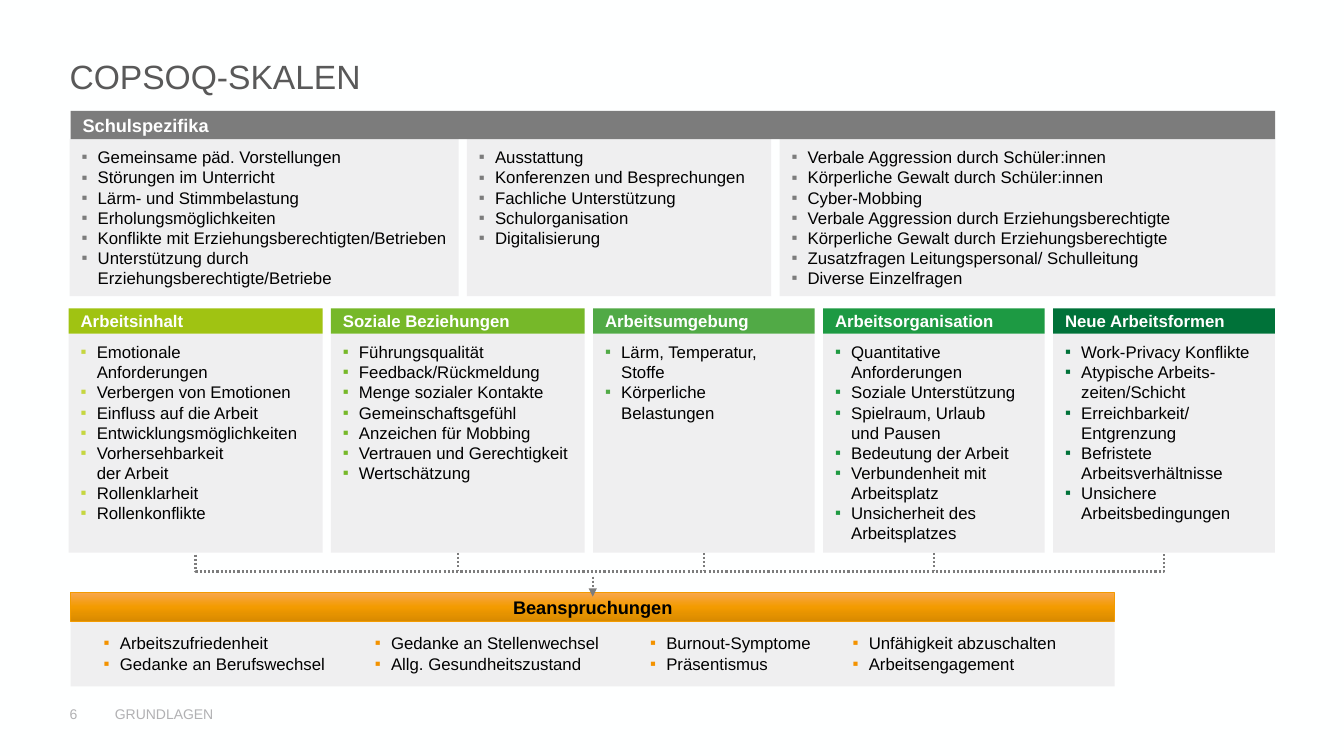
from copy import deepcopy

from lxml import etree
from pptx import Presentation
from pptx.dml.color import RGBColor
from pptx.enum.dml import MSO_LINE
from pptx.enum.shapes import MSO_CONNECTOR, MSO_SHAPE
from pptx.enum.text import MSO_ANCHOR, PP_ALIGN
from pptx.oxml.ns import qn
from pptx.util import Pt

RECTANGLE = MSO_SHAPE.RECTANGLE
STRAIGHT = MSO_CONNECTOR.STRAIGHT
DOTTED = MSO_LINE.ROUND_DOT
TOP, MIDDLE = MSO_ANCHOR.TOP, MSO_ANCHOR.MIDDLE
LEFT, CENTER = PP_ALIGN.LEFT, PP_ALIGN.CENTER

COLORS = {
    "background": "FEFFFF", "panel": "EFEFF0", "gray": "7C7C7C",
    "title": "595959", "footer": "B1B1B3", "black": "000000",
    "white": "FFFFFF", "lime_bullet": "C6D640", "lime": "A0C312",
    "leaf": "76B829", "green": "51AA46", "forest": "1D9A43",
    "forest_bullet": "1F9A42", "pine": "007239", "orange_bullet": "F39200",
    "orange_light": "F8A64B", "orange": "F39B00", "orange_dark": "D88A00",
}

FONT = "Arial"
GAP = 5.9
INSET = 8.6
SCHOOL_LEFT = 49.7
SCALES_LEFT = 49
BRACKET_BOTTOM = 408.2

SCHOOL_PANELS = [
    (277.9, ["Gemeinsame päd. Vorstellungen", "Störungen im Unterricht",
             "Lärm- und Stimmbelastung", "Erholungsmöglichkeiten",
             "Konflikte mit Erziehungsberechtigten/Betrieben",
             "Unterstützung durch Erziehungsberechtigte/Betriebe"]),
    (217.4, ["Ausstattung", "Konferenzen und Besprechungen",
             "Fachliche Unterstützung", "Schulorganisation",
             "Digitalisierung"]),
    (354.2, ["Verbale Aggression durch Schüler:innen",
             "Körperliche Gewalt durch Schüler:innen", "Cyber-Mobbing",
             "Verbale Aggression durch Erziehungsberechtigte",
             "Körperliche Gewalt durch Erziehungsberechtigte",
             "Zusatzfragen Leitungspersonal/ Schulleitung",
             "Diverse Einzelfragen"]),
]

SCALES = [
    ("Arbeitsinhalt", 181.4, 2.9, "lime", "lime_bullet",
     ["Emotionale\nAnforderungen", "Verbergen von Emotionen",
      "Einfluss auf die Arbeit", "Entwicklungsmöglichkeiten",
      "Vorhersehbarkeit\nder Arbeit", "Rollenklarheit", "Rollenkonflikte"]),
    ("Soziale Beziehungen", 181.4, 2.9, "leaf", "leaf",
     ["Führungsqualität", "Feedback/Rückmeldung", "Menge sozialer Kontakte",
      "Gemeinschaftsgefühl", "Anzeichen für Mobbing",
      "Vertrauen und Gerechtigkeit", "Wertschätzung"]),
    ("Arbeitsumgebung", 158.4, INSET, "green", "green",
     ["Lärm, Temperatur,\nStoffe", "Körperliche Belastungen"]),
    ("Arbeitsorganisation", 158.4, 2.9, "forest", "forest_bullet",
     ["Quantitative Anforderungen", "Soziale Unterstützung",
      "Spielraum, Urlaub\nund Pausen", "Bedeutung der Arbeit",
      "Verbundenheit mit Arbeitsplatz", "Unsicherheit des Arbeitsplatzes"]),
    ("Neue Arbeitsformen", 158.4, 2.9, "pine", "pine",
     ["Work-Privacy Konflikte", "Atypische Arbeits-zeiten/Schicht",
      "Erreichbarkeit/ Entgrenzung", "Befristete Arbeitsverhältnisse",
      "Unsichere Arbeitsbedingungen"]),
]

STRAINS = [
    (65.5, ["Arbeitszufriedenheit", "Gedanke an Berufswechsel"]),
    (259.2, ["Gedanke an Stellenwechsel", "Allg. Gesundheitszustand"]),
    (455.8, ["Burnout-Symptome", "Präsentismus"]),
    (600.5, ["Unfähigkeit abzuschalten", "Arbeitsengagement"]),
]


def rgb(name):
    return RGBColor.from_string(COLORS[name])


def add_rectangle(page, left, top, width, height, color):
    box = page.shapes.add_shape(RECTANGLE, Pt(left), Pt(top), Pt(width), Pt(height))
    box.shadow.inherit = False
    box.fill.solid()
    box.fill.fore_color.rgb = rgb(color)
    box.line.fill.background()
    return box


def set_frame(box, insets, anchor=TOP, wrap=True):
    frame = box.text_frame
    frame.word_wrap = wrap
    frame.vertical_anchor = anchor
    (frame.margin_left, frame.margin_top,
     frame.margin_right, frame.margin_bottom) = map(Pt, insets)
    return frame


def write(para, text, size, color, bold=False, align=LEFT):
    para.alignment = align
    for index, part in enumerate(text.split("\n")):
        if index:
            para.add_line_break()
        span = para.add_run()
        span.text = part
        span.font.name = FONT
        span.font.size = Pt(size)
        span.font.bold = bold
        span.font.color.rgb = rgb(color)


def add_bullet(para, color):
    props = para._p.get_or_add_pPr()
    props.set("marL", str(Pt(11.5)))
    props.set("indent", str(-Pt(11.5)))
    bullet_color = etree.SubElement(props, qn("a:buClr"))
    etree.SubElement(bullet_color, qn("a:srgbClr"), val=COLORS[color])
    etree.SubElement(props, qn("a:buFont"), typeface=FONT)
    etree.SubElement(props, qn("a:buChar"), char="▪")


def write_list(frame, items, bullet):
    for index, item in enumerate(items):
        para = frame.add_paragraph() if index else frame.paragraphs[0]
        add_bullet(para, bullet)
        write(para, item, 12, "black")


def add_panel(page, left, top, width, height, items, bullet, right=2.9):
    box = add_rectangle(page, left, top, width, height, "panel")
    write_list(set_frame(box, (INSET, 5.8, right, 0)), items, bullet)


def add_header(page, left, top, width, height, text, color, size):
    box = add_rectangle(page, left, top, width, height, color)
    frame = set_frame(box, (INSET, 0, 0, 0), MIDDLE)
    write(frame.paragraphs[0], text, size, "white", True)


def add_label(page, left, top, width, height, text, size, color, wrap=False):
    box = page.shapes.add_textbox(Pt(left), Pt(top), Pt(width), Pt(height))
    para = set_frame(box, (0, 0, 0, 0), wrap=wrap).paragraphs[0]
    write(para, text, size, color)
    return para


def style_dotted(line):
    line.color.rgb = rgb("gray")
    line.width = Pt(1.5)
    line.dash_style = DOTTED


def add_stem(page, x, top, bottom, arrow=False):
    stem = page.shapes.add_connector(STRAIGHT, Pt(x), Pt(top), Pt(x), Pt(bottom))
    style_dotted(stem.line)
    if arrow:
        etree.SubElement(stem.line._get_or_add_ln(), qn("a:tailEnd"), type="triangle")
    etree.SubElement(stem._element.spPr, qn("a:effectLst"))


def add_bracket(page, left, right):
    top, bottom = Pt(393.1), Pt(BRACKET_BOTTOM)
    builder = page.shapes.build_freeform(Pt(left), top)
    builder.add_line_segments(
        [(Pt(left), bottom), (Pt(right), bottom), (Pt(right), top)], close=False)
    bracket = builder.convert_to_shape()
    bracket.shadow.inherit = False
    bracket.fill.background()
    style_dotted(bracket.line)


def add_strain_bar(page):
    bar = add_rectangle(page, 50.4, 423.4, 745.9, 20.2, "orange")
    bar.fill.gradient()
    bar.fill.gradient_angle = 270
    stop_list = bar._element.spPr.find(".//" + qn("a:gsLst"))
    stop_list.insert(1, deepcopy(stop_list[0]))
    shades = ("orange_light", "orange", "orange_dark")
    for index, (stop, shade) in enumerate(zip(bar.fill.gradient_stops, shades)):
        stop.position = index / 2
        stop.color.rgb = rgb(shade)
    bar.line.color.rgb = rgb("orange")
    bar.line.width = Pt(0.5)
    frame = set_frame(bar, (0, 0, 0, 0), MIDDLE)
    write(frame.paragraphs[0], "Beanspruchungen", 13, "black", True, CENTER)


def add_strains(page):
    add_rectangle(page, 50.4, 442.1, 745.9, 48.2, "panel")
    add_strain_bar(page)
    for left, items in STRAINS:
        box = page.shapes.add_textbox(Pt(left), Pt(449.3), Pt(195.8), Pt(35.3))
        write_list(set_frame(box, (INSET, 2.9, 0, 0)), items, "orange_bullet")
    add_stem(page, 423.4, 411.8, 426.2, arrow=True)


def column_lefts(start, widths):
    return [start + sum(widths[:i]) + i * GAP for i in range(len(widths))]


def add_scales(page):
    widths = [scale[1] for scale in SCALES]
    lefts = column_lefts(SCALES_LEFT, widths)
    centers = [left + width / 2 for left, width in zip(lefts, widths)]
    add_bracket(page, centers[0], centers[-1])
    for center in centers[1:-1]:
        add_stem(page, center, 388.8, BRACKET_BOTTOM)
    for left, (name, width, right, color, bullet, items) in zip(lefts, SCALES):
        add_panel(page, left, 238.3, width, 156.4, items, bullet, right)
        add_header(page, left, 220.3, width, 18, name, color, 12)


def add_school(page):
    lefts = column_lefts(SCHOOL_LEFT, [width for width, _ in SCHOOL_PANELS])
    for left, (width, items) in zip(lefts, SCHOOL_PANELS):
        add_panel(page, left, 99.2, width, 112.3, items, "gray")
    add_header(page, 50.4, 79.2, 860.4, 20.2, "Schulspezifika", "gray", 13)


def main():
    deck = Presentation()
    deck.slide_width, deck.slide_height = Pt(960), Pt(540)
    page = deck.slides.add_slide(deck.slide_layouts[6])
    page.background.fill.solid()
    page.background.fill.fore_color.rgb = rgb("background")
    title = add_label(page, 49.7, 43.2, 860.4, 30.2, "COPSOQ-SKALEN", 24, "title", True)
    title.line_spacing = 0.9
    add_scales(page)
    add_strains(page)
    add_school(page)
    add_label(page, 49.7, 504, 27.4, 28.8, "6", 10, "footer")
    add_label(page, 82.1, 504, 349.9, 28.8, "GRUNDLAGEN", 10, "footer")
    deck.save("out.pptx")


if __name__ == "__main__":
    main()
